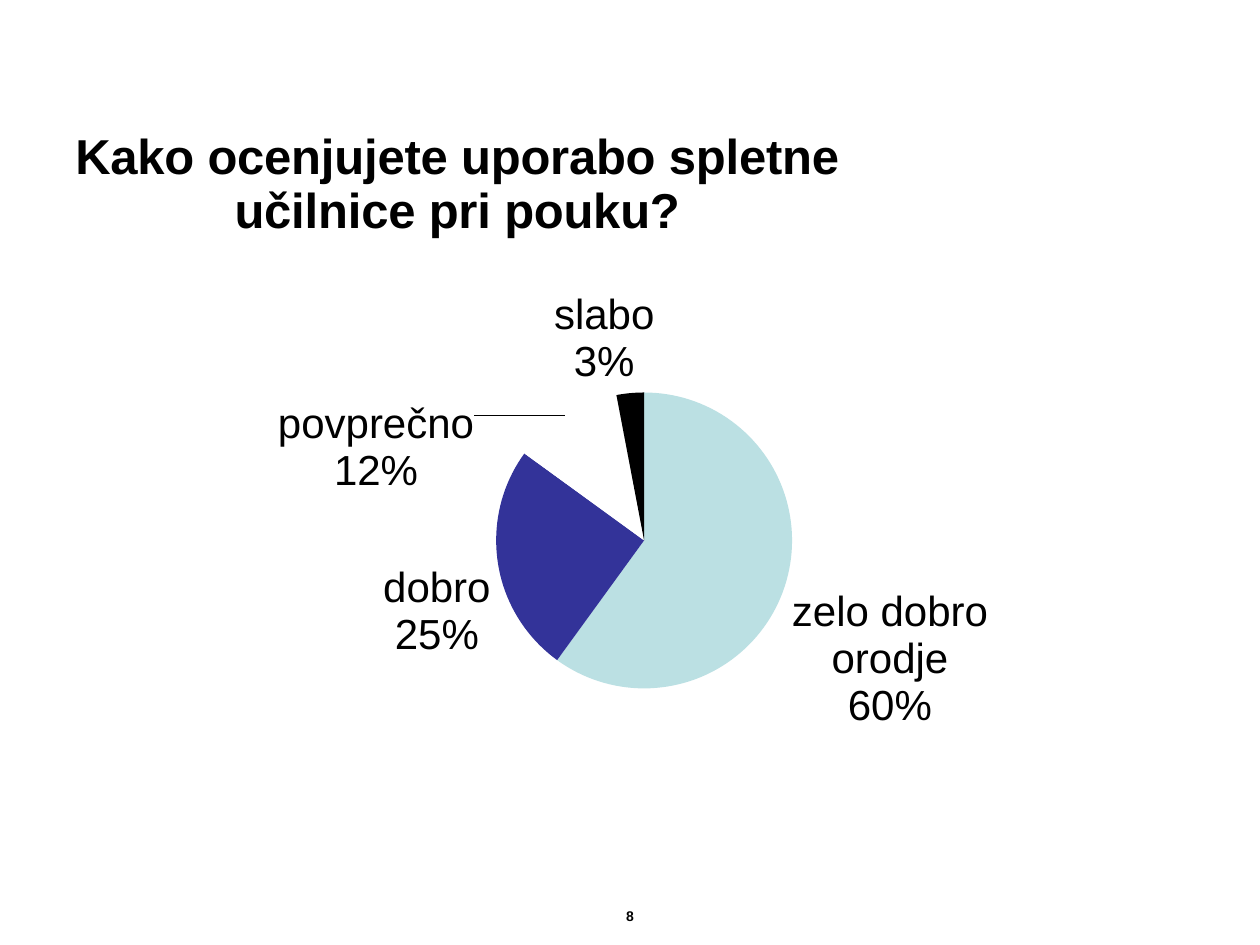
from copy import deepcopy
from typing import Any, NamedTuple

from lxml import etree
from pptx import Presentation
from pptx.chart.data import CategoryChartData
from pptx.dml.color import RGBColor
from pptx.enum.chart import XL_CHART_TYPE, XL_LABEL_POSITION
from pptx.enum.text import MSO_ANCHOR, PP_ALIGN
from pptx.oxml.ns import qn
from pptx.util import Inches, Pt

PIE = XL_CHART_TYPE.PIE
OUTSIDE = XL_LABEL_POSITION.OUTSIDE_END
MIDDLE = MSO_ANCHOR.MIDDLE
CENTER = PP_ALIGN.CENTER

WIDTH, HEIGHT = 10, 7.5
FONT = "Arial"
TITLE = "Kako ocenjujete uporabo spletne učilnice pri pouku?"


class Slice(NamedTuple):
    name: str
    percent: int
    color: str


class Area(NamedTuple):
    left: float
    top: float
    width: float
    height: float


SLICES = [
    Slice("zelo dobro orodje", 60, "BBE0E3"),
    Slice("dobro", 25, "333399"),
    Slice("povprečno", 12, "FFFFFF"),
    Slice("slabo", 3, "000000"),
]
CHART_AREA = Area(5, 12.27, 90, 74.27)
NUMBER_AREA = Area(5, 93.75, 90, 6.25)
EDGE = {"xMode": "edge", "yMode": "edge"}
TITLE_SPOT = {"x": 0.3, "y": 0.1}
PIE_SPOT = {"x": 38.2, "y": 39.4, "w": 26.1, "h": 42.2}
LABEL_SHIFTS = {2: {"x": -7.65, "y": 12.2}, 3: {"x": 2.2, "y": 0}}


def place(area: Area) -> list:
    return [
        Inches(percent * size / 100)
        for percent, size in zip(area, (WIDTH, HEIGHT, WIDTH, HEIGHT))
    ]


def color(value: str) -> RGBColor:
    return RGBColor.from_string(value)


def style_font(font: Any, size: float, bold: bool = False) -> None:
    values = {"name": FONT, "size": Pt(size), "bold": bold}
    for name, value in values.items():
        setattr(font, name, value)
    font.color.rgb = color("000000")


def add_value(parent: Any, tag: str, value: Any) -> None:
    etree.SubElement(parent, qn(tag)).set("val", str(value))


def set_layout(parent: Any, index: int, modes: dict, percents: dict) -> None:
    for old in parent.findall(qn("c:layout")):
        parent.remove(old)
    layout = etree.Element(qn("c:layout"))
    manual = etree.SubElement(layout, qn("c:manualLayout"))
    for name, mode in modes.items():
        add_value(manual, f"c:{name}", mode)
    for name, percent in percents.items():
        add_value(manual, f"c:{name}", percent / 100)
    parent.insert(index, layout)


def style_labels(series: Any) -> None:
    labels = series.data_labels
    values = {
        "show_value": False,
        "show_category_name": True,
        "show_percentage": True,
        "number_format": "0%",
        "number_format_is_linked": False,
        "position": OUTSIDE,
    }
    for name, value in values.items():
        setattr(labels, name, value)
    style_font(labels.font, 24)
    element = labels._element
    for old in element.findall(qn("c:showLeaderLines")):
        element.remove(old)
    etree.SubElement(element, qn("c:separator")).text = "\n"
    shared = list(element)
    for position, (index, shift) in enumerate(LABEL_SHIFTS.items()):
        moved = etree.Element(qn("c:dLbl"))
        add_value(moved, "c:idx", index)
        moved.extend([deepcopy(child) for child in shared])
        set_layout(moved, 1, {}, shift)
        element.insert(position, moved)
    add_value(element, "c:showLeaderLines", 1)


def add_pie(slide: Any) -> None:
    data = CategoryChartData()
    data.categories = [item.name for item in SLICES]
    data.add_series("Series 1", [item.percent for item in SLICES])
    chart = slide.shapes.add_chart(PIE, *place(CHART_AREA), data).chart
    style_font(chart.font, 10)
    chart.has_legend = False
    chart.has_title = True
    title = chart.chart_title
    title.text_frame.text = TITLE
    style_font(title.text_frame.paragraphs[0].runs[0].font, 28, True)
    set_layout(title._element, 1, EDGE, TITLE_SPOT)
    plot = chart.plots[0]
    plot.vary_by_categories = True
    series = plot.series[0]
    for index, item in enumerate(SLICES):
        fill = series.points[index].format.fill
        fill.solid()
        fill.fore_color.rgb = color(item.color)
    style_labels(series)
    plot_area = chart._chartSpace.chart.plotArea
    set_layout(plot_area, 0, {"layoutTarget": "inner", **EDGE}, PIE_SPOT)


def add_number(slide: Any, text: str) -> None:
    box = slide.shapes.add_textbox(*place(NUMBER_AREA))
    frame = box.text_frame
    frame.word_wrap = True
    frame.vertical_anchor = MIDDLE
    para = frame.paragraphs[0]
    para.alignment = CENTER
    span = para.add_run()
    span.text = text
    style_font(span.font, 8, True)


def main() -> None:
    deck = Presentation()
    deck.slide_width, deck.slide_height = Inches(WIDTH), Inches(HEIGHT)
    slide = deck.slides.add_slide(deck.slide_layouts[6])
    add_number(slide, "8")
    add_pie(slide)
    deck.save("out.pptx")


if __name__ == "__main__":
    main()
